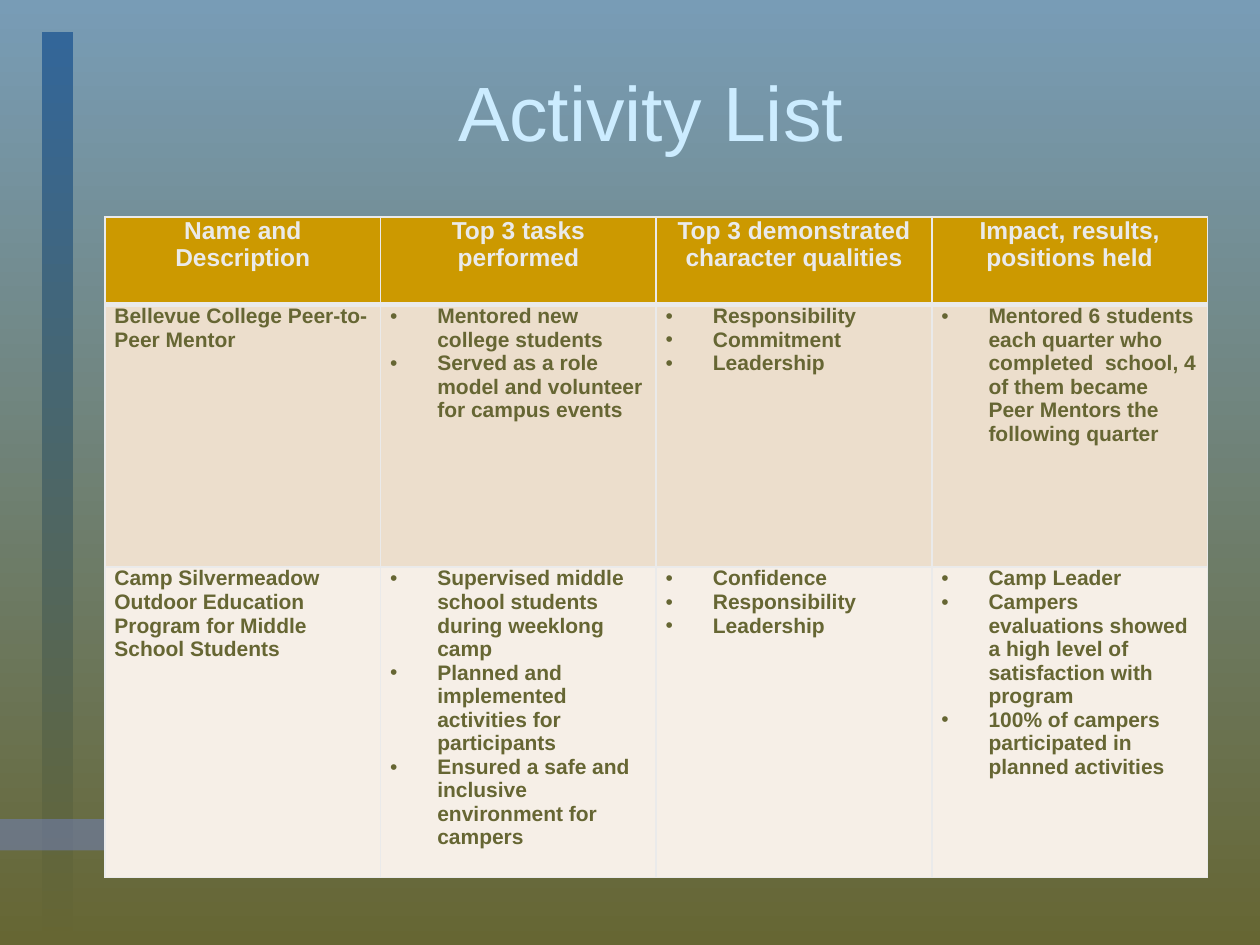
from lxml import etree
from pptx import Presentation
from pptx.dml.color import RGBColor
from pptx.enum import shapes, text
from pptx.oxml import ns
from pptx.util import Pt

COLORS = {
    "sky": "789CB6", "olive": "666633", "blue": "336699", "violet": "7181C3",
    "title": "CCECFF", "light": "EAEAEA", "gold": "CC9900",
    "sand": "ECDECC", "cream": "F6EFE7",
}
FONT = "Arial"
HEADERS = [
    "Name and Description", "Top 3 tasks performed",
    "Top 3 demonstrated character qualities", "Impact, results, positions held",
]
ACTIVITIES = [
    ("Bellevue College Peer-to-Peer Mentor", [
        ["Mentored new college students",
         "Served as a role model and volunteer for campus events"],
        ["Responsibility", "Commitment", "Leadership"],
        ["Mentored 6 students each quarter who completed  school, 4 of them "
         "became Peer Mentors the following quarter"],
    ]),
    ("Camp Silvermeadow Outdoor Education Program for Middle School Students", [
        ["Supervised middle school students during weeklong camp",
         "Planned and implemented activities for participants",
         "Ensured a safe and inclusive environment for campers"],
        ["Confidence", "Responsibility", "Leadership"],
        ["Camp Leader",
         "Campers evaluations showed a high level of satisfaction with program",
         "100% of campers participated in planned activities"],
    ]),
]


def rgb(name):
    return RGBColor.from_string(COLORS[name])


def fill_gradient(fill, top, bottom):
    fill.gradient()
    fill.gradient_angle = 270
    for stop, name in zip(fill.gradient_stops, (top, bottom)):
        stop.color.rgb = rgb(name)


def style_font(paragraph, size, color, bold=False):
    font = paragraph.font
    font.name, font.size, font.bold = FONT, Pt(size), bold
    font.color.rgb = rgb(color)


def add_bar(slide, box):
    bar = slide.shapes.add_shape(shapes.MSO_SHAPE.RECTANGLE, *map(Pt, box))
    bar.shadow.inherit = False
    bar.line.fill.background()
    return bar


def add_background(slide, vertical_box, horizontal_box):
    fill_gradient(slide.background.fill, "sky", "olive")
    vertical = add_bar(slide, vertical_box)
    fill_gradient(vertical.fill, "blue", "olive")
    horizontal = add_bar(slide, horizontal_box)
    horizontal.fill.solid()
    horizontal.fill.fore_color.rgb = rgb("violet")
    color = horizontal._element.spPr.find(".//" + ns.qn("a:srgbClr"))
    etree.SubElement(color, ns.qn("a:alpha"), val="50000")


def add_title(slide, box):
    frame = slide.shapes.add_textbox(*map(Pt, box)).text_frame
    frame.word_wrap = True
    frame.vertical_anchor = text.MSO_ANCHOR.MIDDLE
    paragraph = frame.paragraphs[0]
    paragraph.text = "Activity List"
    paragraph.alignment = text.PP_ALIGN.CENTER
    style_font(paragraph, 44, "title")


def set_borders(cell, top, bottom):
    properties = cell._tc.get_or_add_tcPr()
    for side, width in zip("LRTB", (1, 1, top, bottom)):
        line = etree.SubElement(properties, ns.qn(f"a:ln{side}"), w=str(Pt(width)))
        fill = etree.SubElement(line, ns.qn("a:solidFill"))
        etree.SubElement(fill, ns.qn("a:srgbClr"), val=COLORS["light"])


def add_bullet(paragraph):
    properties = paragraph._p.get_or_add_pPr()
    properties.set("marL", str(Pt(27)))
    properties.set("indent", str(Pt(-27)))
    etree.SubElement(properties, ns.qn("a:buFont"), typeface=FONT)
    etree.SubElement(properties, ns.qn("a:buChar"), char="•")


def fill_cell(cell, lines, fill, size, color, bulleted=False, centered=False):
    cell.margin_left = cell.margin_right = Pt(5.4)
    cell.margin_top = cell.margin_bottom = 0
    cell.fill.solid()
    cell.fill.fore_color.rgb = rgb(fill)
    cell.text = "\n".join(lines)
    for paragraph in cell.text_frame.paragraphs:
        if bulleted:
            add_bullet(paragraph)
        if centered:
            paragraph.alignment = text.PP_ALIGN.CENTER
        style_font(paragraph, size, color, bold=True)


def add_activity_table(slide, box, row_heights):
    frame = slide.shapes.add_table(len(row_heights), len(HEADERS), *map(Pt, box))
    table = frame.table
    for column in table.columns:
        column.width = Pt(box[2] / len(HEADERS))
    for row, height in zip(table.rows, row_heights):
        row.height = Pt(height)
    for column, header in enumerate(HEADERS):
        for row in range(len(row_heights)):
            set_borders(table.cell(row, column),
                        top=3 if row == 1 else 1, bottom=3 if row == 0 else 1)
        fill_cell(table.cell(0, column), [header], "gold", 14, "light", centered=True)
    for row, ((name, lists), fill) in enumerate(zip(ACTIVITIES, ("sand", "cream")), 1):
        fill_cell(table.cell(row, 0), [name], fill, 12, "olive")
        for column, lines in enumerate(lists, 1):
            fill_cell(table.cell(row, column), lines, fill, 12, "olive", bulleted=True)


def main():
    presentation = Presentation()
    presentation.slide_width, presentation.slide_height = Pt(720), Pt(540)
    slide = presentation.slides.add_slide(presentation.slide_layouts[6])
    add_background(slide, (24, 18, 18, 522), (0, 468, 366, 18))
    add_title(slide, (66, 18, 612, 90))
    add_activity_table(slide, (60, 124, 630, 377.5), (50, 150, 177.5))
    presentation.save("out.pptx")


if __name__ == "__main__":
    main()
